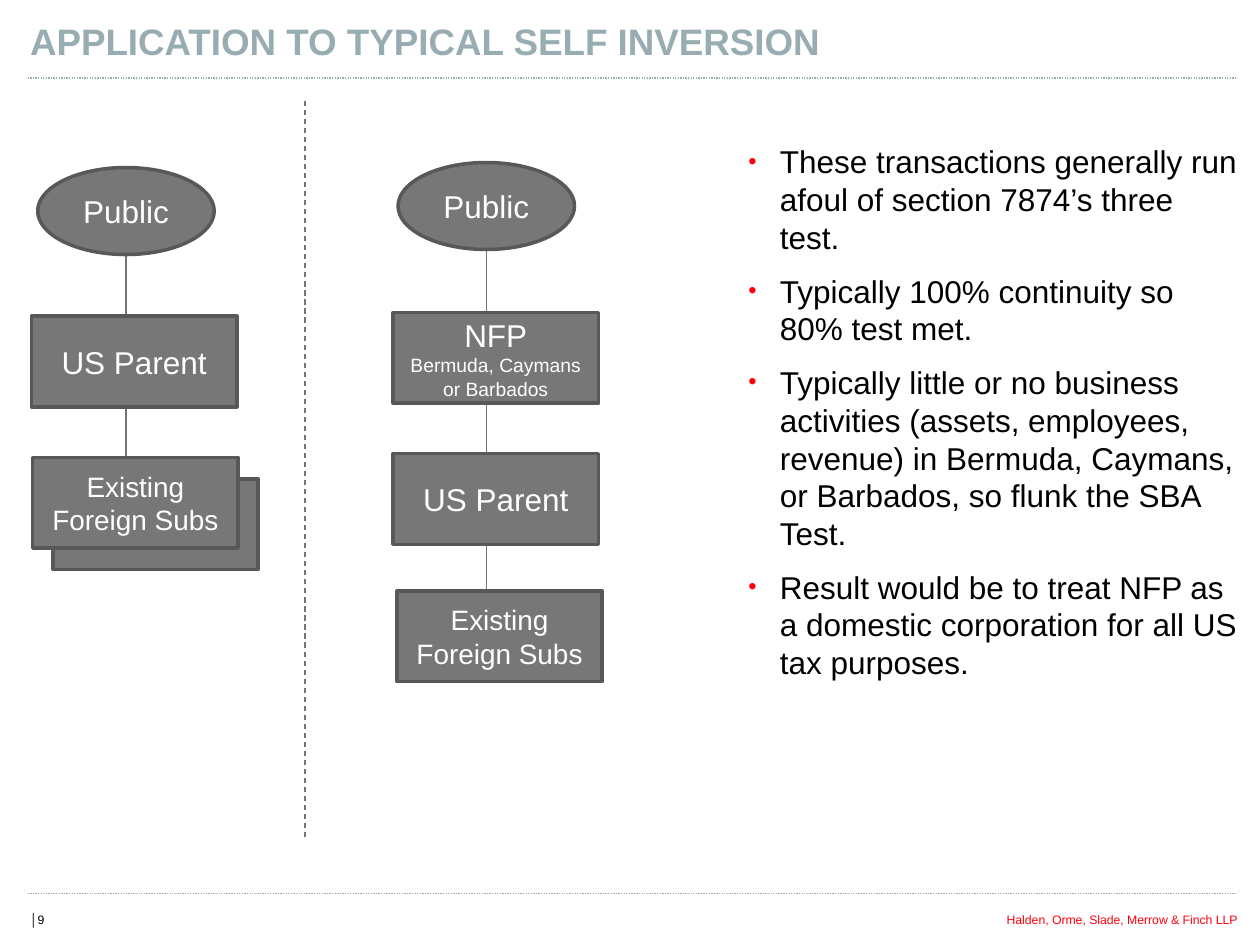
from pptx import Presentation, util as u
from pptx.dml.color import RGBColor
from pptx.enum import dml, shapes, text
from pptx.oxml.ns import qn
from lxml import etree

TEAL = RGBColor(0x98, 0xAD, 0xB2)
GRAY = RGBColor(0x77, 0x77, 0x77)
EDGE = RGBColor(0x58, 0x58, 0x58)
WIRE = RGBColor(0x74, 0x74, 0x74)
RED = RGBColor(0xFE, 0x00, 0x0C)
BLACK = RGBColor(0, 0, 0)
WHITE = RGBColor(255, 255, 255)

RECT = shapes.MSO_SHAPE.RECTANGLE
OVAL = shapes.MSO_SHAPE.OVAL
MID = text.MSO_ANCHOR.MIDDLE
CENTER = text.PP_ALIGN.CENTER
RIGHT = text.PP_ALIGN.RIGHT

COLS, ROWS = 100, 75
BOX = (16.3, 7.2)
EGG = (14, 6.9)

POINTS = [
    "These transactions generally run afoul of section 7874’s three test.",
    "Typically 100% continuity so 80% test met.",
    "Typically little or no business activities (assets, employees, "
    "revenue) in Bermuda, Caymans, or Barbados, so flunk the SBA Test.",
    "Result would be to treat NFP as a domestic corporation for all US "
    "tax purposes.",
]
SUBS = [("Existing Foreign Subs", 16)]
PARENT = [("US Parent", 18)]
PUBLIC = [("Public", 18)]
NFP = [("NFP", 18), ("Bermuda, Caymans or Barbados", 11)]


def grid(*spots):
    return [u.Inches(10 / COLS * n) if i % 2 == 0 else u.Inches(7.5 / ROWS * n)
            for i, n in enumerate(spots)]


def add_run(para, words, size, color, bold=False):
    run = para.add_run()
    run.text = words
    font = run.font
    font.name, font.size, font.bold = "Arial", u.Pt(size), bold
    font.color.rgb = color


def add_label(slide, spot, words, size, color, bold=False, align=None, anchor=None):
    frame = slide.shapes.add_textbox(*grid(*spot)).text_frame
    frame.word_wrap = True
    frame.vertical_anchor = anchor
    para = frame.paragraphs[0]
    para.alignment = align
    add_run(para, words, size, color, bold)


def add_line(slide, ends, color, dash=None):
    line = slide.shapes.add_connector(shapes.MSO_CONNECTOR.STRAIGHT, *grid(*ends))
    line.line.color.rgb = color
    line.line.width = u.Pt(0.75)
    line.line.dash_style = dash
    etree.SubElement(line._element.spPr, qn("a:effectLst"))


def add_node(slide, kind, left, top, lines=()):
    size = EGG if kind == OVAL else BOX
    node = slide.shapes.add_shape(kind, *grid(left, top, *size))
    node.shadow.inherit = False
    node.fill.solid()
    node.fill.fore_color.rgb = GRAY
    node.line.color.rgb = EDGE
    node.line.width = u.Pt(2)
    frame = node.text_frame
    frame.word_wrap = True
    frame.vertical_anchor = MID
    for i, (words, size) in enumerate(lines):
        para = frame.add_paragraph() if i else frame.paragraphs[0]
        para.alignment = CENTER
        add_run(para, words, size, WHITE)


def add_tree(slide, axis, top, nodes):
    add_line(slide, (axis, top + EGG[1], axis, nodes[-1][1]), WIRE)
    add_node(slide, OVAL, axis - EGG[0] / 2, top, PUBLIC)
    for left, row, lines in nodes:
        add_node(slide, RECT, left, row, lines)


def add_bullet(para):
    props = para._p.get_or_add_pPr()
    props.set("marL", str(u.Inches(0.3)))
    props.set("indent", str(u.Inches(-0.25)))
    color = etree.SubElement(props, qn("a:buClr"))
    etree.SubElement(color, qn("a:srgbClr"), val=str(RED))
    etree.SubElement(props, qn("a:buSzPct"), val="75000")
    etree.SubElement(props, qn("a:buFont"), typeface="Arial")
    etree.SubElement(props, qn("a:buChar"), char="•")


def add_list(slide, spot, points):
    frame = slide.shapes.add_textbox(*grid(*spot)).text_frame
    frame.word_wrap = True
    frame.margin_left = frame.margin_right = 0
    frame.margin_top = frame.margin_bottom = 0
    for i, words in enumerate(points):
        para = frame.add_paragraph() if i else frame.paragraphs[0]
        add_bullet(para)
        para.space_before = u.Pt(3 if i else 0)
        para.space_after = u.Pt(6)
        add_run(para, words, 18, BLACK)


def main():
    deck = Presentation()
    deck.slide_width, deck.slide_height = grid(COLS, ROWS)
    slide = deck.slides.add_slide(deck.slide_layouts[6])

    add_label(slide, (65.9, 71.9, 33.3, 4.2 - 1.1),
              "Halden, Orme, Slade, Merrow & Finch LLP", 7, RED, align=RIGHT)
    add_label(slide, (1.4, 71.9, 51.3, 2.2), "│9", 7, BLACK)
    for row in (70.9, 6.2):
        add_line(slide, (2.2, row, 98.2, row), TEAL, dml.MSO_LINE.ROUND_DOT)
    add_label(slide, (1.4, 1.1, 85, 4.2), "APPLICATION TO TYPICAL SELF INVERSION",
              21, TEAL, bold=True, anchor=MID)
    add_list(slide, (58.9, 11.3, 39.3, 60.8), POINTS)

    add_node(slide, RECT, 4.2, 38)
    add_tree(slide, 10, 13.3, [(2.5, 25.1, PARENT), (2.6, 36.3, SUBS)])
    add_tree(slide, 38.6, 12.9,
             [(31.2, 24.8, NFP), (31.2, 36, PARENT), (31.5, 46.9, SUBS)])
    add_line(slide, (24.2, 8, 24.2, 66.5), WIRE, dml.MSO_LINE.DASH)

    deck.save("out.pptx")


if __name__ == "__main__":
    main()
